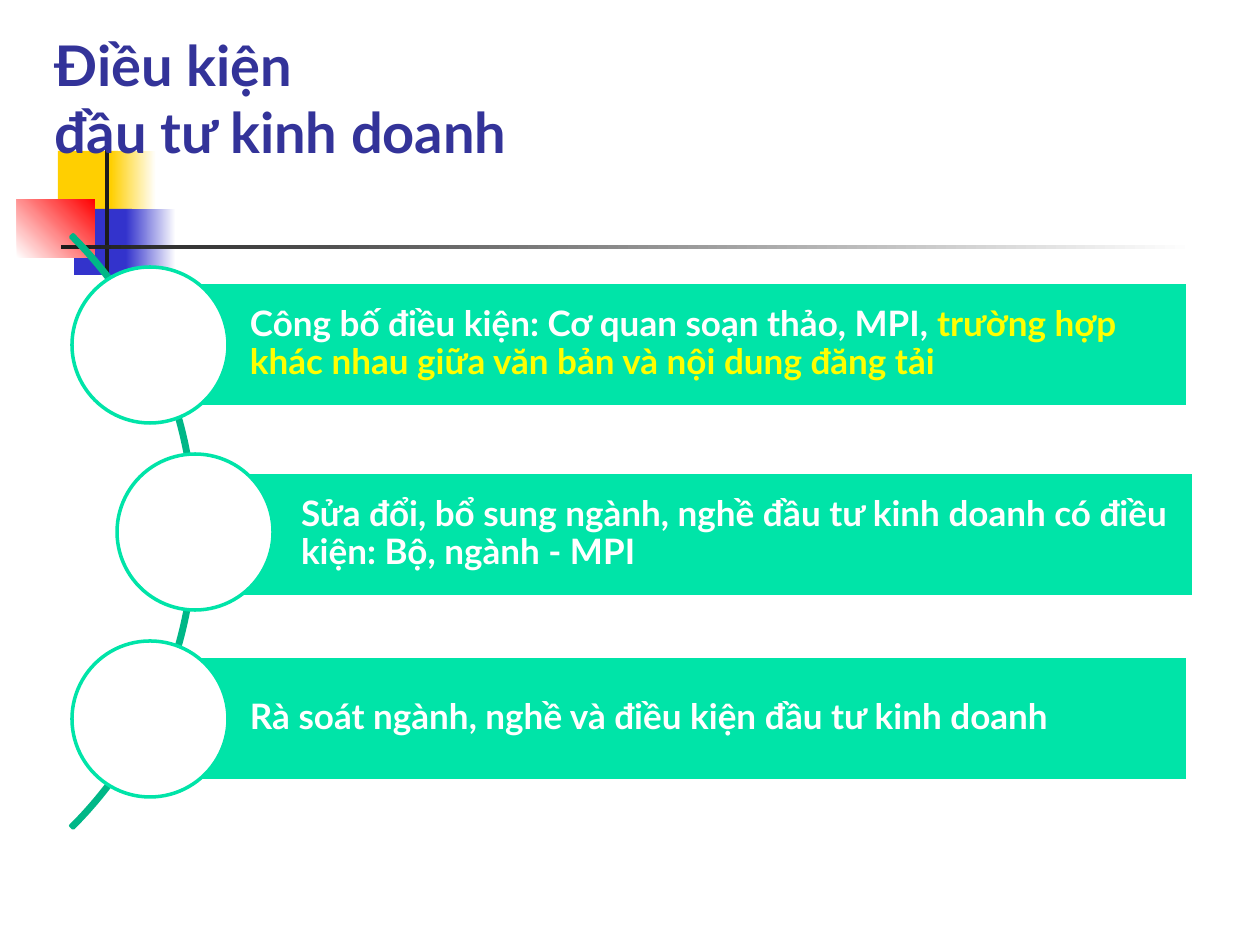
from pptx import Presentation
from pptx.dml.color import RGBColor
from pptx.enum.shapes import MSO_SHAPE
from pptx.enum.text import MSO_ANCHOR, PP_ALIGN
from pptx.util import Pt

PX = 914400 // 126
RECTANGLE = MSO_SHAPE.RECTANGLE
OVAL = MSO_SHAPE.OVAL
BLOCK_ARC = MSO_SHAPE.BLOCK_ARC
MIDDLE = MSO_ANCHOR.MIDDLE
BOTTOM = MSO_ANCHOR.BOTTOM
LEFT = PP_ALIGN.LEFT

WHITE = RGBColor(0xFF, 0xFF, 0xFF)
YELLOW = RGBColor(0xFF, 0xFF, 0x00)
GOLD = RGBColor(0xFF, 0xCF, 0x01)
BLUE = RGBColor(0x33, 0x33, 0xCC)
RED = RGBColor(0xFF, 0x00, 0x00)
BLACK = RGBColor(0x1C, 0x1C, 0x1C)
NAVY = RGBColor(0x33, 0x33, 0x99)
GREEN = RGBColor(0x00, 0xE4, 0xA8)
DARK_GREEN = RGBColor(0x00, 0xB7, 0x87)

FONT = "Lato"
CIRCLE_SIZE = 156
CIRCLE_TOP = 267
CIRCLE_STEP = 187
BAR_HEIGHT = 125

ORNAMENTS = [
    ((58, 151, 60, 66), (GOLD,), 0),
    ((111, 151, 45, 66), (GOLD, WHITE), 0),
    ((74, 209, 58, 66), (BLUE,), 0),
    ((126, 209, 50, 66), (BLUE, WHITE), 0),
    ((17, 199, 78, 59), (WHITE, RED), 45),
    ((105, 136, 4, 145), (BLACK,), 0),
    ((61, 245, 1134, 4), (BLACK, WHITE), 0),
]

ROWS = [
    (72, (150, 282, 1038), [
        ("Công bố điều kiện: Cơ quan soạn thảo, MPI, ", WHITE),
        ("trường hợp khác nhau giữa văn bản và nội dung đăng tải", YELLOW),
    ]),
    (117, (201, 472, 993), [
        ("Sửa đổi, bổ sung ngành, nghề đầu tư kinh doanh có điều kiện: "
         "Bộ, ngành - MPI", WHITE),
    ]),
    (72, (150, 656, 1038), [
        ("Rà soát ngành, nghề và điều kiện đầu tư kinh doanh", WHITE),
    ]),
]


def scaled(bounds):
    return [value * PX for value in bounds]


def add_figure(page, kind, bounds, fill=None, line=None):
    shape = page.shapes.add_shape(kind, *scaled(bounds))
    shape.shadow.inherit = False
    if fill is None:
        shape.fill.background()
    else:
        shape.fill.solid()
        shape.fill.fore_color.rgb = fill
    if line is None:
        shape.line.fill.background()
    else:
        shape.line.color.rgb = line
        shape.line.width = Pt(2)
    return shape


def add_ornament(page, bounds, colors, angle):
    shape = add_figure(page, RECTANGLE, bounds, colors[0])
    if len(colors) > 1:
        shape.fill.gradient()
        shape.fill.gradient_angle = angle
        for stop, color in zip(shape.fill.gradient_stops, colors):
            stop.color.rgb = color


def style_run(span, size, color):
    span.font.name = FONT
    span.font.size = Pt(size)
    span.font.bold = True
    span.font.color.rgb = color


def add_title(page, text):
    box = page.shapes.add_textbox(*scaled((42, -31, 1191, 202)))
    frame = box.text_frame
    frame.word_wrap = True
    frame.vertical_anchor = BOTTOM
    frame.text = text
    for para in frame.paragraphs:
        for span in para.runs:
            style_run(span, 32, NAVY)


def add_arc(page):
    arc = add_figure(page, BLOCK_ARC, (-643, 112, 839, 839), line=DARK_GREEN)
    for index, value in enumerate((189, 27, 0.004)):
        arc.adjustments[index] = value


def add_bar(page, left, top, width, spans):
    bar = add_figure(page, RECTANGLE, (left, top, width, BAR_HEIGHT), GREEN, WHITE)
    frame = bar.text_frame
    frame.word_wrap = True
    frame.vertical_anchor = MIDDLE
    frame.margin_left = 100 * PX
    frame.margin_right = frame.margin_top = frame.margin_bottom = 8 * PX
    para = frame.paragraphs[0]
    para.alignment = LEFT
    para.line_spacing = 0.9
    for text, color in spans:
        span = para.add_run()
        span.text = text
        style_run(span, 20, color)


def main():
    deck = Presentation()
    deck.slide_width = 1260 * PX
    deck.slide_height = 945 * PX
    page = deck.slides.add_slide(deck.slide_layouts[6])
    for bounds, colors, angle in ORNAMENTS:
        add_ornament(page, bounds, colors, angle)
    add_title(page, "Điều kiện \vđầu tư kinh doanh")
    add_arc(page)
    for index, (circle_left, bar_place, spans) in enumerate(ROWS):
        add_bar(page, *bar_place, spans)
        circle_top = CIRCLE_TOP + index * CIRCLE_STEP
        add_figure(page, OVAL, (circle_left, circle_top, CIRCLE_SIZE, CIRCLE_SIZE),
                   WHITE, GREEN)
    deck.save("out.pptx")


if __name__ == "__main__":
    main()
